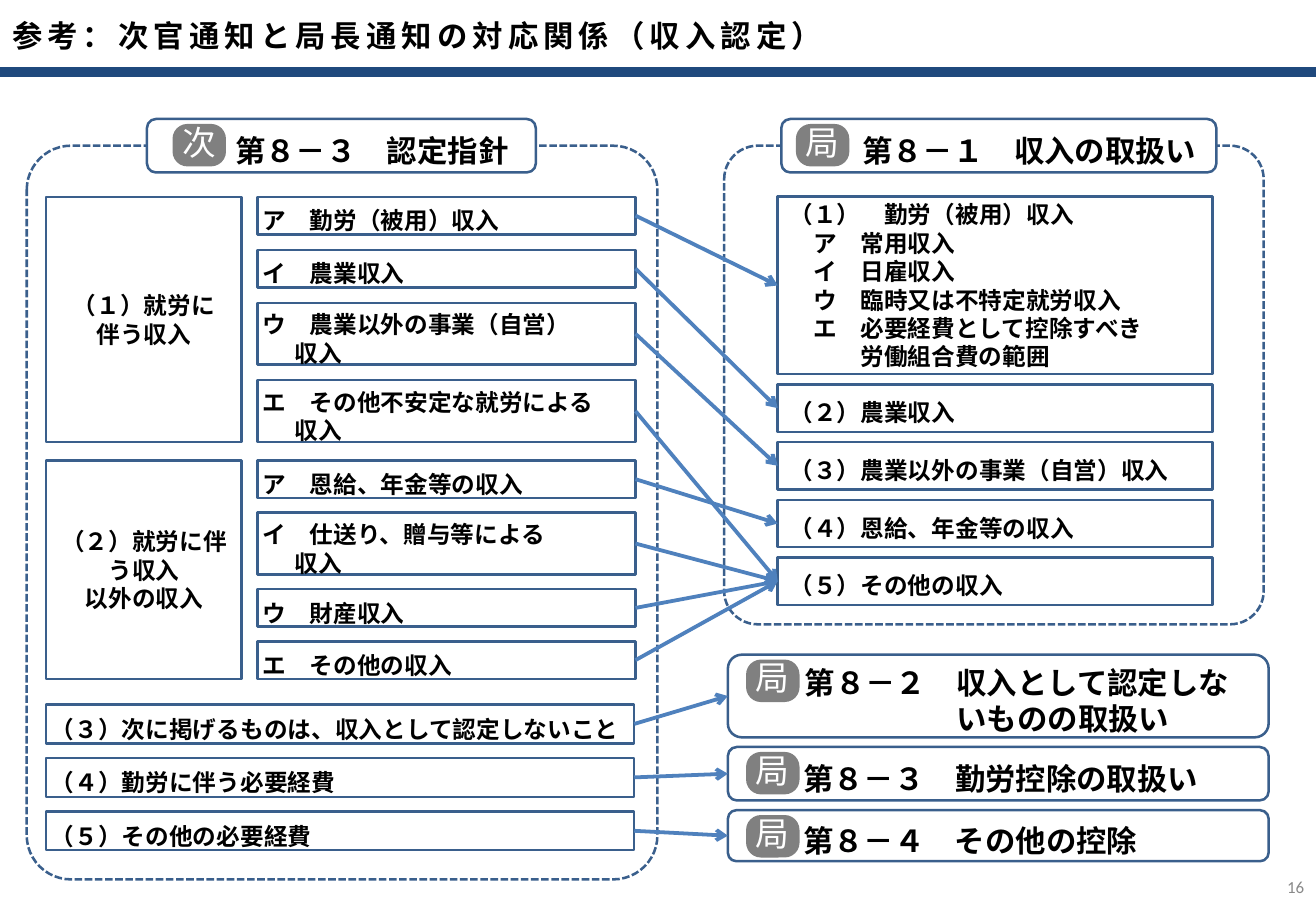
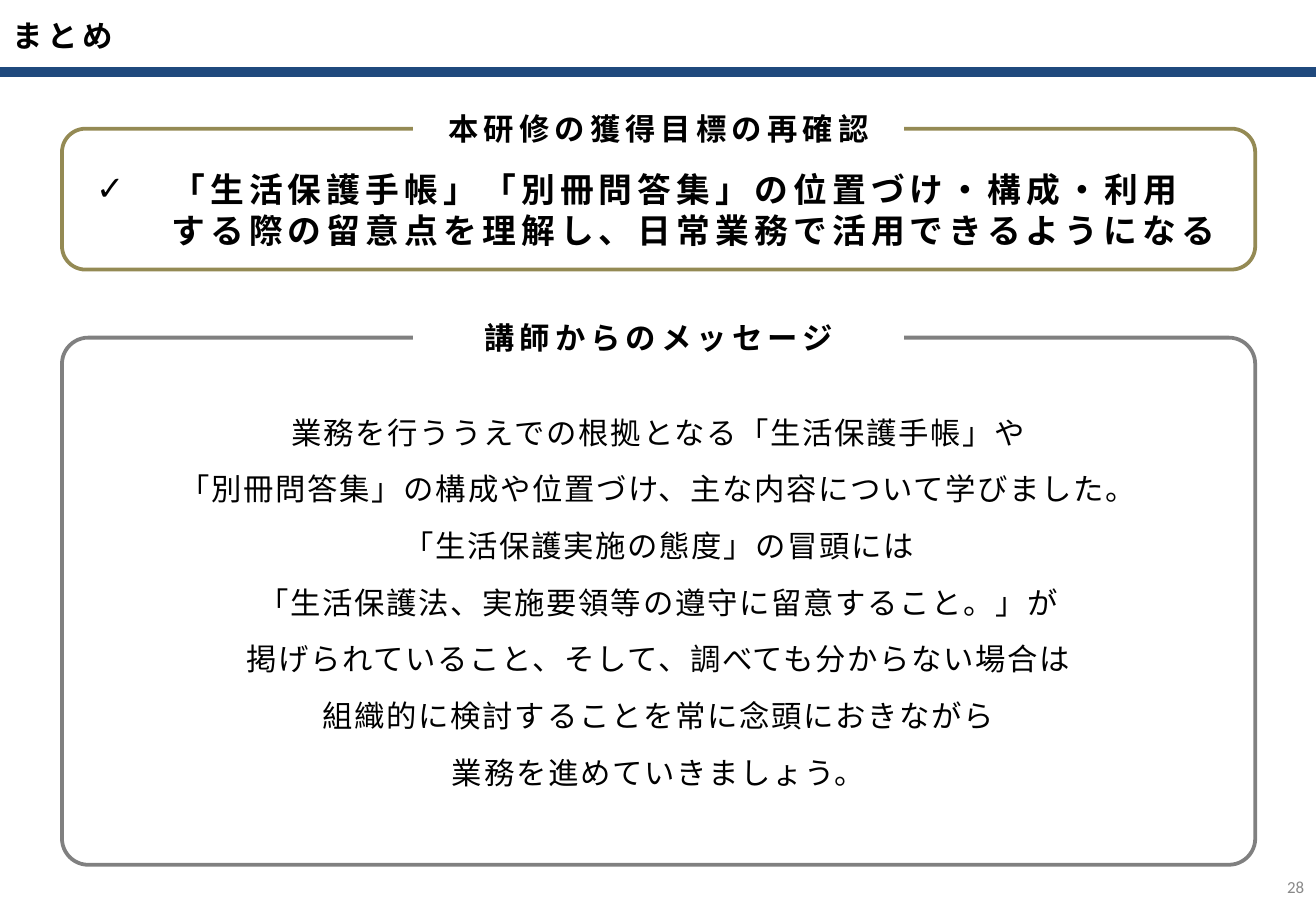
from dataclasses import dataclass

from lxml.etree import SubElement
from pptx import Presentation
from pptx.dml.color import RGBColor
from pptx.enum.dml import MSO_LINE_DASH_STYLE as Dash
from pptx.enum.shapes import MSO_CONNECTOR as Connector, MSO_SHAPE as Preset
from pptx.enum.text import MSO_ANCHOR as Anchor, MSO_AUTO_SIZE as AutoSize, PP_ALIGN as Align
from pptx.oxml.ns import qn
from pptx.util import Inches, Pt


@dataclass(frozen=True)
class Style:
    """Type settings of a paragraph."""
    size: int
    bold: bool = True
    color: str = "000000"
    spacing: int = 0
    font: str = "Noto Sans CJK JP"


@dataclass(frozen=True)
class Theme:
    """Colours and type sizes of the deck."""
    band: str = "1F497D"
    frame: str = "3A5F8C"
    arrow: str = "4F81BD"
    goal: str = "948A54"
    gray: str = "808080"
    white: str = "FFFFFF"
    title: Style = Style(18, spacing=3)
    heading: Style = Style(18)
    item: Style = Style(14)
    aim: Style = Style(20, spacing=3)
    message: Style = Style(18, bold=False, spacing=1)
    seal: Style = Style(20, bold=False, color="FFFFFF")
    number: Style = Style(10, bold=False, color="898989", font="Calibri")


THEME = Theme()
WIDTH, HEIGHT = 10.83, 7.5
TITLE_HEIGHT = 0.59
LEFT_COLUMN, LEFT_WIDTH = 0.38, 4.84
ITEM_COLUMN, ITEM_WIDTH = 2.12, 3.11
RIGHT_COLUMN, RIGHT_WIDTH = 6.4, 3.58
RULE_COLUMN, RULE_WIDTH = 5.99, 4.45
PANEL_COLUMN, PANEL_WIDTH = 0.51, 9.82
SHORT, TALL = 0.31, 0.51
PLAIN = (0.1, 0.05, 0.1, 0.05)
LOW = (0.1, 0.12, 0.1, 0.05)
ITEM_INSETS = (0.04, 0.12, 0.04, 0.04)
TIGHT = (0.04,) * 4


def stack(left, top, width, height, heights):
    """Return areas of the given heights, spread with equal gaps over a column."""
    gap = (height - sum(heights)) / max(len(heights) - 1, 1)
    return [(left, top + sum(heights[:index]) + gap * index, width, row)
            for index, row in enumerate(heights)]


def set_style(para, style):
    """Format a whole paragraph."""
    font = para.font
    font.size, font.bold = Pt(style.size), style.bold
    font.color.rgb = RGBColor.from_string(style.color)
    font.name = style.font
    properties = para._p.get_or_add_pPr().find(qn("a:defRPr"))
    SubElement(properties, qn("a:ea")).set("typeface", style.font)
    if style.spacing:
        properties.set("spc", str(style.spacing * 100))


def write(shape, lines, style, align=Align.LEFT, insets=PLAIN):
    """Write lines, each a text or a pair of indent in ems and text."""
    frame = shape.text_frame
    frame.word_wrap, frame.auto_size = True, AutoSize.NONE
    frame.vertical_anchor = Anchor.MIDDLE
    (frame.margin_left, frame.margin_top,
     frame.margin_right, frame.margin_bottom) = map(Inches, insets)
    for index, line in enumerate(lines):
        indent, text = line if isinstance(line, tuple) else (0, line)
        para = frame.add_paragraph() if index else frame.paragraphs[0]
        para.text, para.alignment = text, align
        set_style(para, style)
        if indent:
            para._p.get_or_add_pPr().set("marL", str(Pt(indent * style.size)))
    return frame


def place(shape, area):
    """Move and size a shape."""
    shape.left, shape.top, shape.width, shape.height = map(Inches, area)


def add_box(page, area, line=None, fill=None, preset=Preset.RECTANGLE, weight=1.5, round_by=None):
    """Add a flat preset shape."""
    box = page.shapes.add_shape(preset, *map(Inches, area))
    box.shadow.inherit = False
    if fill:
        box.fill.solid()
        box.fill.fore_color.rgb = RGBColor.from_string(fill)
    else:
        box.fill.background()
    if line:
        box.line.color.rgb = RGBColor.from_string(line)
        box.line.width = Pt(weight)
    else:
        box.line.fill.background()
    if round_by:
        box.adjustments[0] = round_by
    return box


def add_item(page, area, lines, align=Align.LEFT, insets=ITEM_INSETS):
    """Add a framed entry."""
    box = add_box(page, area, THEME.frame)
    write(box, lines, THEME.item, align, insets)
    return box


def add_group(page, area, lines):
    """Add the framed name of a group of entries."""
    return add_item(page, area, lines, Align.CENTER, TIGHT)


def add_rule(page, area, mark, lines, seal_offset, align=Align.LEFT):
    """Add a rounded heading that carries a seal."""
    box = add_box(page, area, THEME.frame, THEME.white, Preset.ROUNDED_RECTANGLE)
    write(box, lines, THEME.heading, align, LOW)
    left, top = area[0] + seal_offset, area[1] + 0.04
    seal = add_box(page, (left, top, 0.44, 0.35), None, THEME.gray,
                   Preset.ROUNDED_RECTANGLE, round_by=0.35)
    frame = write(seal, [mark], THEME.seal, Align.CENTER, (0,) * 4)
    frame.paragraphs[0].line_spacing = Pt(20)
    return box


def add_line(page, color, weight, start=(0, 0), end=(0, 0)):
    """Add a straight line without a shadow."""
    line = page.shapes.add_connector(Connector.STRAIGHT, *map(Inches, start + end))
    line.line.color.rgb = RGBColor.from_string(color)
    line.line.width = Pt(weight)
    SubElement(line.element.spPr, qn("a:effectLst"))
    return line


def add_arrow(page, source, target):
    """Join the right side of one box to the left side of another."""
    arrow = add_line(page, THEME.arrow, 2.25)
    arrow.begin_connect(source, 3)
    arrow.end_connect(target, 1)
    SubElement(arrow.line._get_or_add_ln(), qn("a:tailEnd")).set("type", "arrow")


def add_zone(page, area):
    """Add a dashed rounded outline."""
    zone = add_box(page, area, THEME.frame, preset=Preset.ROUNDED_RECTANGLE, round_by=0.07)
    zone.line.dash_style = Dash.SQUARE_DOT


def add_panel(page, top, height, color, caption, round_by=None):
    """Add a rounded outline with a caption set into its top edge."""
    add_box(page, (PANEL_COLUMN, top, PANEL_WIDTH, height), color,
            preset=Preset.ROUNDED_RECTANGLE, weight=2.25, round_by=round_by)
    label = add_box(page, (3.4, top - 0.2, 4.04, 0.4), fill=THEME.white)
    write(label, [caption], THEME.title, Align.CENTER)


def add_band(deck, page):
    """Put the band under the title on the slide master."""
    band = add_line(page, THEME.band, 6, (0, TITLE_HEIGHT), (WIDTH, TITLE_HEIGHT))
    band.element.nvCxnSpPr.cNvPr.id = 20
    deck.slide_master.shapes.element.append(band.element)


def add_page(deck, layout, title, number):
    """Add a slide with its title and page number."""
    page = deck.slides.add_slide(deck.slide_layouts.get_by_name(layout))
    place(page.shapes.title, (0, 0, WIDTH, TITLE_HEIGHT))
    write(page.shapes.title, [title], THEME.title)
    box = page.shapes.add_textbox(*map(Inches, (10.42, 7.1, 0.41, 0.4)))
    write(box, [number], THEME.number, Align.RIGHT)
    return page


def build_relations(page):
    """Show which notice of one office answers to which of the other."""
    add_zone(page, (0.22, 1.2, 5.19, 6.04))
    add_zone(page, (5.96, 1.2, 4.44, 3.94))
    add_rule(page, (1.21, 0.98, 3.2, 0.44), "次", [(2, "第８－３　認定指針")], 0.21, Align.CENTER)
    add_rule(page, (6.43, 0.98, RIGHT_WIDTH, 0.44), "局",
             [(2, "第８－１　収入の取扱い")], 0.12, Align.CENTER)
    add_group(page, (LEFT_COLUMN, 1.62, 1.61, 2.02), ["（１）就労に", "伴う収入"])
    add_group(page, (LEFT_COLUMN, 3.79, 1.61, 1.8), ["（２）就労に伴う収入", "以外の収入"])

    income_texts = [
        ["ア　勤労（被用）収入"],
        ["イ　農業収入"],
        ["ウ　農業以外の事業（自営）", (1.35, "収入")],
        ["エ　その他不安定な就労による", (1.35, "収入")],
        ["ア　恩給、年金等の収入"],
        ["イ　仕送り、贈与等による", (1.35, "収入")],
        ["ウ　財産収入"],
        ["エ　その他の収入"],
    ]
    income_areas = (
        stack(ITEM_COLUMN, 1.62, ITEM_WIDTH, 2.02, [SHORT, SHORT, TALL, TALL])
        + stack(ITEM_COLUMN, 3.79, ITEM_WIDTH, 1.8, [SHORT, TALL, SHORT, SHORT]))
    incomes = [add_item(page, *entry) for entry in zip(income_areas, income_texts)]

    handling_texts = [
        ["（１）　勤労（被用）収入", (1, "ア　常用収入"), (1, "イ　日雇収入"),
         (1, "ウ　臨時又は不特定就労収入"), (1, "エ　必要経費として控除すべき"),
         (3, "労働組合費の範囲")],
        ["（２）農業収入"],
        ["（３）農業以外の事業（自営）収入"],
        ["（４）恩給、年金等の収入"],
        ["（５）その他の収入"],
    ]
    handling_areas = stack(RIGHT_COLUMN, 1.62, RIGHT_WIDTH, 3.36, [1.46] + [0.39] * 4)
    handlings = [add_item(page, area, lines, insets=LOW if len(lines) == 1 else PLAIN)
                 for area, lines in zip(handling_areas, handling_texts)]

    expense_texts = ["（３）次に掲げるものは、収入として認定しないこと",
                     "（４）勤労に伴う必要経費", "（５）その他の必要経費"]
    expense_areas = stack(LEFT_COLUMN, 5.8, LEFT_WIDTH, 1.2, [0.32] * 3)
    expenses = [add_item(page, area, [text]) for area, text in zip(expense_areas, expense_texts)]

    rule_texts = [
        [(2, "第８－２　収入として認定しな"), (7, "いものの取扱い")],
        [(2, "第８－３　勤労控除の取扱い")],
        [(2, "第８－４　その他の控除")],
    ]
    rule_areas = stack(RULE_COLUMN, 5.39, RULE_WIDTH, 1.7, [0.68, 0.44, 0.42])
    rules = [add_rule(page, area, "局", lines, 0.15)
             for area, lines in zip(rule_areas, rule_texts)]

    for income, target in zip(incomes, (0, 1, 2, 4, 3, 4, 4, 4)):
        add_arrow(page, income, handlings[target])
    for expense, rule in zip(expenses, rules):
        add_arrow(page, expense, rule)


def build_summary(page):
    """Restate the aim of the course and close with a message."""
    aim = page.placeholders[1]
    place(aim, (0.69, 1.41, 9.46, 0.63))
    frame = write(aim, ["「生活保護手帳」「別冊問答集」の位置づけ・構成・利用\v"
                        "する際の留意点を理解し、日常業務で活用できるようになる"], THEME.aim)
    para = frame.paragraphs[0]
    para.space_before = Pt(0)
    properties = para._p.get_or_add_pPr()
    properties.set("marL", str(Inches(0.62)))
    properties.set("indent", str(Inches(-0.62)))
    bullet = SubElement(properties, qn("a:buChar"))
    bullet.set("char", "✓")
    properties.find(qn("a:defRPr")).addprevious(bullet)

    add_panel(page, 1.06, 1.16, THEME.goal, "本研修の獲得目標の再確認")
    add_panel(page, 2.78, 4.34, THEME.gray, "講師からのメッセージ", 0.05)
    message = page.shapes.add_textbox(*map(Inches, (0.67, 3, 9.5, 3.91)))
    frame = write(message, [
        "業務を行ううえでの根拠となる「生活保護手帳」や",
        "「別冊問答集」の構成や位置づけ、主な内容について学びました。",
        "「生活保護実施の態度」の冒頭には",
        "「生活保護法、実施要領等の遵守に留意すること。」が",
        "掲げられていること、そして、調べても分からない場合は",
        "組織的に検討することを常に念頭におきながら",
        "業務を進めていきましょう。",
    ], THEME.message, Align.CENTER)
    for para in frame.paragraphs:
        para.space_before = Pt(12)


def main():
    """Build and save the deck."""
    deck = Presentation()
    deck.slide_width, deck.slide_height = Inches(WIDTH), Inches(HEIGHT)
    relations = add_page(deck, "Title Only", "参考：次官通知と局長通知の対応関係（収入認定）", "16")
    add_band(deck, relations)
    build_relations(relations)
    build_summary(add_page(deck, "Title and Content", "まとめ", "28"))
    deck.save("out.pptx")


if __name__ == "__main__":
    main()
